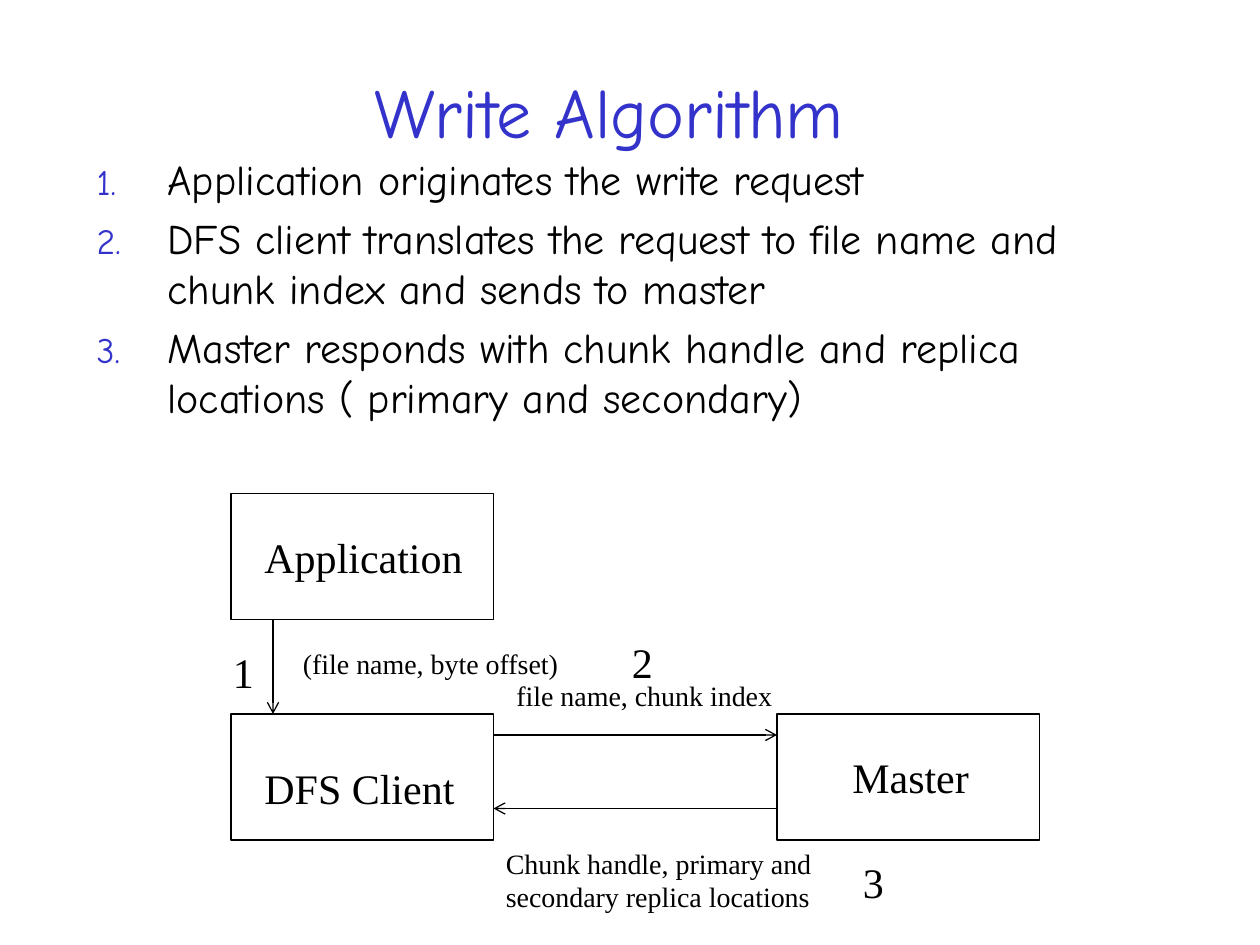
from lxml.etree import SubElement
from pptx import Presentation
from pptx.dml.color import RGBColor
from pptx.enum.shapes import MSO_CONNECTOR, MSO_SHAPE
from pptx.enum.text import MSO_ANCHOR, MSO_AUTO_SIZE, PP_ALIGN
from pptx.oxml.ns import qn
from pptx.util import Emu, Pt

PX = 9525
COLORS = {"title": "3333CC", "ink": "000000"}
HEAD_FONT = "Comic Neue"
DIAGRAM_FONT = "Times New Roman"
BOX_W, BOX_H = 200, 96

STEPS = [
    "Application originates the write request",
    "DFS client translates the request to file name and chunk index and sends to master",
    "Master responds with chunk handle and replica locations ( primary and secondary)",
]
BOXES = [(8, 0), (8, 168), (424, 168)]
ARROWS = [
    ((40, BOX_H), (40, 168)),
    ((208, 184), (424, 184)),
    ((424, 240), (208, 240)),
]
LABELS = [
    ("Application", 24, 24, 172),
    ("DFS Client", 24, 200, 166),
    ("Master", 472, 192, 109),
    ("1", 0, 112, 36),
    ("2", 304, 104, 36),
    ("3", 480, 272, 36),
]
NOTES = [
    (" (file name, byte offset)", 48, 112, 320, 36),
    ("file name, chunk index", 216, 136, 232, 36),
    ("Chunk handle, primary and secondary replica locations", 208, 264, 296, 61),
]


def px(*values):
    return [Emu(v * PX) for v in values]


def rgb(name):
    return RGBColor.from_string(COLORS[name])


def add_run(p, text, font, size, color="ink"):
    r = p.add_run()
    r.text = text
    r.font.name = font
    r.font.size = Pt(size)
    r.font.color.rgb = rgb(color)


def place(sp, box):
    sp.left, sp.top, sp.width, sp.height = px(*box)


def number(p, indent):
    pPr = p._p.get_or_add_pPr()
    pPr.set("marL", str(indent * PX))
    pPr.set("indent", str(-indent * PX))
    clr = SubElement(pPr, qn("a:buClr"))
    SubElement(clr, qn("a:srgbClr"), val=COLORS["title"])
    SubElement(pPr, qn("a:buSzPct"), val="85000")
    SubElement(pPr, qn("a:buFont"), typeface=HEAD_FONT)
    SubElement(pPr, qn("a:buAutoNum"), type="arabicPeriod")


def fill_title(sp, box, text):
    place(sp, box)
    tf = sp.text_frame
    tf.auto_size = MSO_AUTO_SIZE.NONE
    tf.vertical_anchor = MSO_ANCHOR.MIDDLE
    p = tf.paragraphs[0]
    p.alignment = PP_ALIGN.CENTER
    add_run(p, text, HEAD_FONT, 40, "title")


def fill_steps(sp, box, steps):
    place(sp, box)
    tf = sp.text_frame
    tf.auto_size = MSO_AUTO_SIZE.NONE
    for i, step in enumerate(steps):
        p = tf.add_paragraph() if i else tf.paragraphs[0]
        number(p, 54)
        add_run(p, step, HEAD_FONT, 24)


def add_box(shapes, x, y):
    sp = shapes.add_shape(MSO_SHAPE.RECTANGLE, *px(x, y, BOX_W, BOX_H))
    sp.shadow.inherit = False
    sp.fill.background()
    sp.line.color.rgb = rgb("ink")
    sp.line.width = Pt(0.75)


def add_arrow(shapes, x1, y1, x2, y2):
    sp = shapes.add_connector(MSO_CONNECTOR.STRAIGHT, *px(x1, y1, x2, y2))
    sp.line.color.rgb = rgb("ink")
    sp.line.width = Pt(0.75)
    SubElement(sp.line._get_or_add_ln(), qn("a:tailEnd"), type="arrow")
    SubElement(sp._element.spPr, qn("a:effectLst"))


def add_text(shapes, text, box, size, wrap):
    tf = shapes.add_textbox(*px(*box)).text_frame
    tf.word_wrap = wrap
    tf.auto_size = MSO_AUTO_SIZE.SHAPE_TO_FIT_TEXT
    add_run(tf.paragraphs[0], text, DIAGRAM_FONT, size)


def add_diagram(shapes, left, top):
    for x, y in BOXES:
        add_box(shapes, left + x, top + y)
    for (x1, y1), (x2, y2) in ARROWS:
        add_arrow(shapes, left + x1, top + y1, left + x2, top + y2)
    for text, x, y, w in LABELS:
        add_text(shapes, text, (left + x, top + y, w, 48), 24, False)
    for text, x, y, w, h in NOTES:
        add_text(shapes, text, (left + x, top + y, w, h), 16, True)


def main():
    prs = Presentation()
    prs.slide_width, prs.slide_height = px(960, 720)
    s = prs.slides.add_slide(prs.slide_layouts[1])
    fill_title(s.shapes.title, (56, 24, 816, 120), "Write Algorithm")
    fill_steps(s.placeholders[1], (64, 112, 816, 184), STEPS)
    add_diagram(s.shapes, 168, 376)
    prs.save("out.pptx")


if __name__ == "__main__":
    main()
